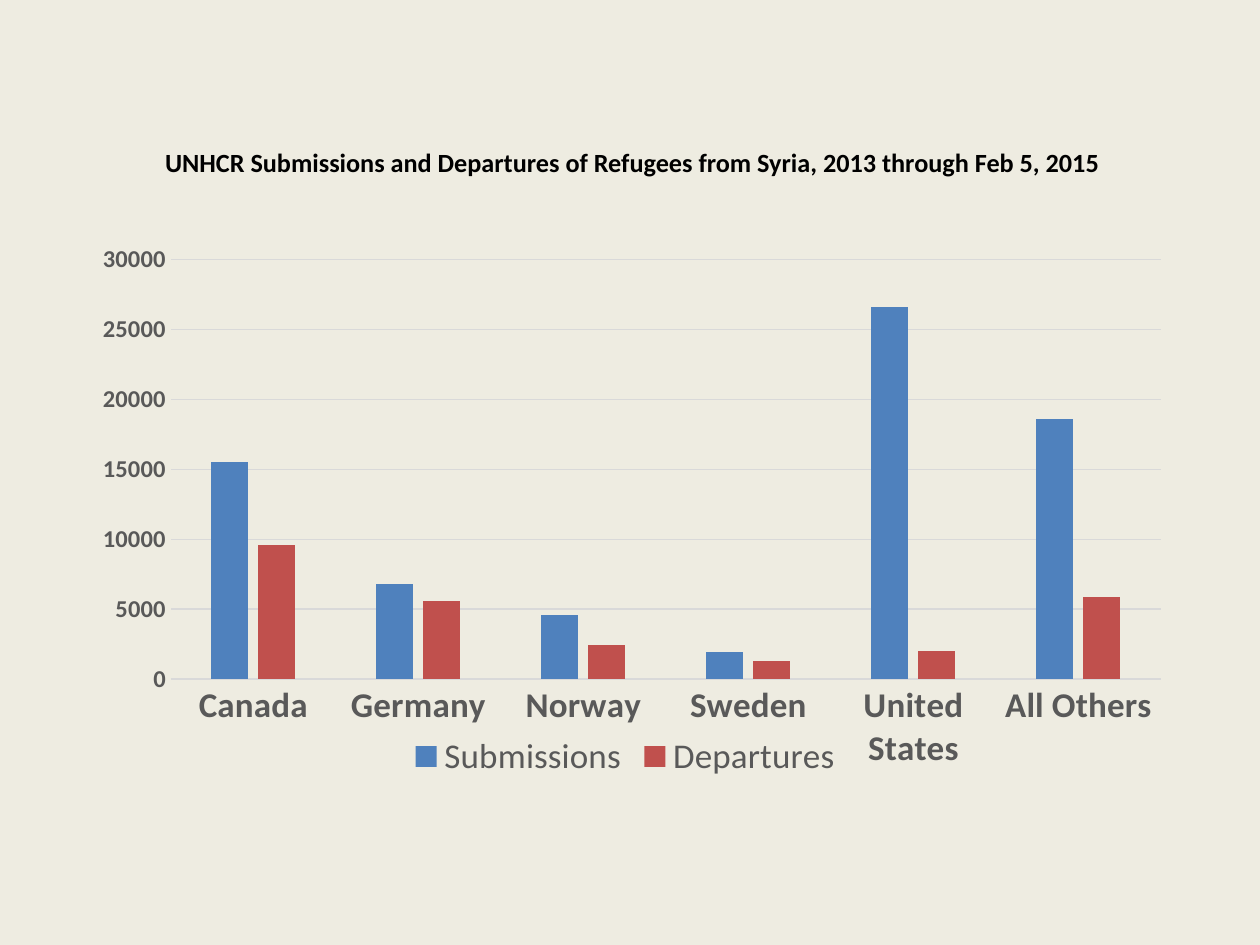
from lxml import etree
from pptx import Presentation
from pptx import util as u
from pptx.chart import data as chart_data
from pptx.dml.color import RGBColor
from pptx.enum import chart as charts, text
from pptx.oxml import ns

COLORS = {
    "background": "EEECE1",
    "title": "000000",
    "label": "595959",
    "grid": "D9D9D9",
    "Submissions": "4F81BD",
    "Departures": "C0504D",
}
FONT = "Calibri"
COUNTRIES = ["Canada", "Germany", "Norway", "Sweden", "United States", "All Others"]
REFUGEES = {
    "Submissions": [15500, 6800, 4600, 1900, 26600, 18600],
    "Departures": [9600, 5600, 2400, 1300, 2000, 5900],
}


def color(name):
    """Return the named colour."""
    return RGBColor.from_string(COLORS[name])


def set_font(font, size, name, bold=False):
    """Set the typeface, size, colour and weight of a font."""
    font.name, font.size, font.bold = FONT, u.Pt(size), bold
    font.color.rgb = color(name)


def set_line(line):
    """Draw a thin grid-coloured line."""
    line.color.rgb = color("grid")
    line.width = u.Pt(0.75)


def set_plot_layout(chart, **fractions):
    """Fix the inner plot area to fractions of the chart box."""
    plot_area = chart.plots[0]._element.getparent()
    for old in plot_area.findall(ns.qn("c:layout")):
        plot_area.remove(old)
    layout = etree.Element(ns.qn("c:layout"))
    manual = etree.SubElement(layout, ns.qn("c:manualLayout"))
    settings = {"layoutTarget": "inner", "xMode": "edge", "yMode": "edge", **fractions}
    for tag, value in settings.items():
        etree.SubElement(manual, ns.qn(f"c:{tag}")).set("val", str(value))
    plot_area.insert(0, layout)


def style_axes(chart):
    """Style the country axis and the count axis with its gridlines."""
    for axis, size in ((chart.category_axis, 20), (chart.value_axis, 14)):
        axis.major_tick_mark = axis.minor_tick_mark = charts.XL_TICK_MARK.NONE
        set_font(axis.tick_labels.font, size, "label", bold=True)
    set_line(chart.category_axis.format.line)
    counts = chart.value_axis
    counts.minimum_scale, counts.maximum_scale, counts.major_unit = 0, 30000, 5000
    counts.format.line.fill.background()
    counts.has_major_gridlines = True
    set_line(counts.major_gridlines.format.line)


def add_refugee_chart(page, box):
    """Add the clustered columns with a legend below."""
    table = chart_data.CategoryChartData(number_format="General")
    table.categories = COUNTRIES
    for name, values in REFUGEES.items():
        table.add_series(name, values)
    kind = charts.XL_CHART_TYPE.COLUMN_CLUSTERED
    chart = page.shapes.add_chart(kind, *map(u.Inches, box), table).chart
    chart.has_title = False
    set_font(chart.font, 10, "title")
    plot = chart.plots[0]
    plot.gap_width, plot.overlap, plot.vary_by_categories = 219, -27, False
    for series in plot.series:
        series.format.fill.solid()
        series.format.fill.fore_color.rgb = color(series.name)
    style_axes(chart)
    set_plot_layout(chart, x=0.076, y=0.016, w=0.924, h=0.786)
    chart.has_legend = True
    chart.legend.position = charts.XL_LEGEND_POSITION.BOTTOM
    chart.legend.include_in_layout = False
    set_font(chart.legend.font, 20, "label")


def add_title(page, box):
    """Add the centred heading above the chart."""
    frame = page.shapes.add_textbox(*map(u.Inches, box)).text_frame
    frame.word_wrap = True
    frame.auto_size = text.MSO_AUTO_SIZE.SHAPE_TO_FIT_TEXT
    para = frame.paragraphs[0]
    para.alignment = text.PP_ALIGN.CENTER
    span = para.add_run()
    span.text = "UNHCR Submissions and Departures of Refugees from Syria, 2013 through Feb 5, 2015"
    set_font(span.font, 15, "title", bold=True)


def main():
    """Build and save the deck."""
    deck = Presentation()
    deck.slide_width, deck.slide_height = u.Inches(10), u.Inches(7.5)
    page = deck.slides.add_slide(deck.slide_layouts[6])
    page.background.fill.solid()
    page.background.fill.fore_color.rgb = color("background")
    add_refugee_chart(page, (0.71, 1.94, 8.51, 4.29))
    add_title(page, (0.82, 1.11, 8.4, 0.35))
    deck.save("out.pptx")


if __name__ == "__main__":
    main()
